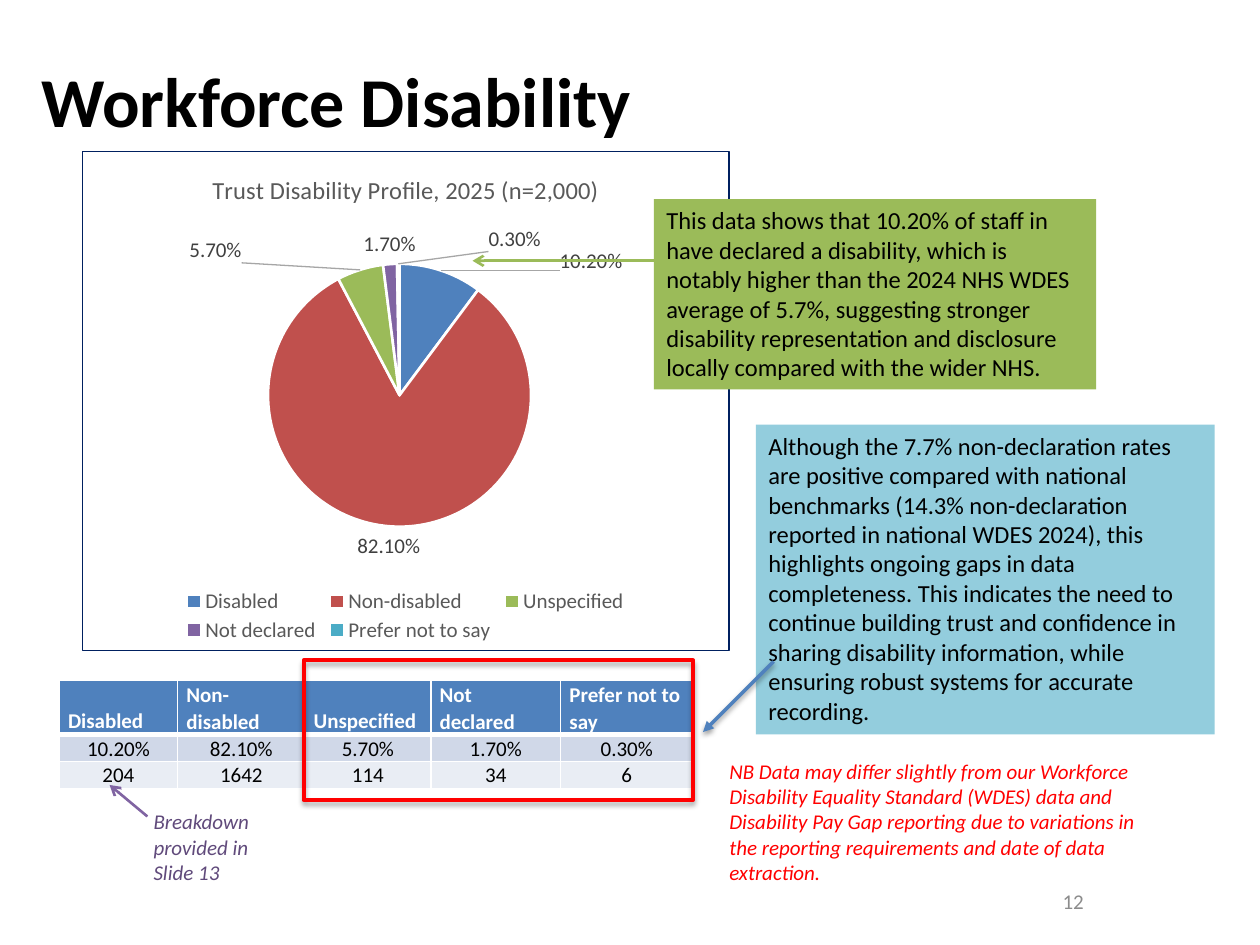
from pptx import Presentation
from pptx.chart.data import CategoryChartData
from pptx.dml.color import RGBColor
from pptx.enum.chart import XL_CHART_TYPE as ChartType, XL_LABEL_POSITION as LabelPosition
from pptx.enum.chart import XL_LEGEND_POSITION as LegendPosition
from pptx.enum.shapes import MSO_CONNECTOR as Connector, MSO_SHAPE as Preset
from pptx.enum.text import MSO_ANCHOR as Anchor, MSO_AUTO_SIZE as AutoSize, PP_ALIGN as Align
from pptx.oxml import parse_xml
from pptx.oxml.ns import nsdecls, qn
from pptx.util import Inches, Pt

FONT = "Calibri"
CATEGORIES = ["Disabled", "Non-disabled", "Unspecified", "Not declared", "Prefer not to say"]
SHARES = [0.102, 0.821, 0.057, 0.017, 0.003]
COUNTS = [204, 1642, 114, 34, 6]
SLICE_COLOURS = ["4F81BD", "C0504D", "9BBB59", "8064A2", "4BACC6"]
# Labels moved away from the pie, as fractions of the chart
LABEL_OFFSETS = {0: (0.18, 0.02), 2: (-0.18, 0), 4: (0.18, -0.01)}


def colour(hex_string):
    return RGBColor.from_string(hex_string)


def inches(box):
    return [Inches(value) for value in box]


def style_font(font, size, hex_string, bold=False, italic=False):
    font.name = FONT
    font.size = Pt(size)
    font.bold = bold
    font.italic = italic
    font.color.rgb = colour(hex_string)


def write(paragraph, text, size, hex_string, align=Align.LEFT, **style):
    paragraph.alignment = align
    run = paragraph.add_run()
    run.text = text
    style_font(run.font, size, hex_string, **style)


def set_effects(shape, opacity=None, blur=0, distance=0):
    """Give a shape a downward shadow, or none when no opacity is given."""
    shadow = ""
    if opacity:
        shadow = (f'<a:outerShdw blurRad="{Pt(blur)}" dist="{Pt(distance)}" dir="5400000" '
                  f'rotWithShape="0"><a:srgbClr val="000000"><a:alpha val="{opacity * 1000}"/>'
                  '</a:srgbClr></a:outerShdw>')
    properties = shape._element.spPr
    for old in properties.findall(qn("a:effectLst")):
        properties.remove(old)
    properties.append(parse_xml(f'<a:effectLst {nsdecls("a")}>{shadow}</a:effectLst>'))


def add_title(slide, box, text):
    title = slide.shapes.title
    title.left, title.top, title.width, title.height = inches(box)
    title.text_frame.vertical_anchor = Anchor.MIDDLE
    write(title.text_frame.paragraphs[0], text, 40, "000000", bold=True)


def add_note(slide, box, text, hex_string, align=Align.LEFT, anchor=Anchor.TOP, italic=True):
    frame = slide.shapes.add_textbox(*inches(box)).text_frame
    frame.word_wrap = True
    frame.vertical_anchor = anchor
    write(frame.paragraphs[0], text, 12, hex_string, align, italic=italic)


def add_callout(slide, box, text, fill):
    shape = slide.shapes.add_shape(Preset.RECTANGLE, *inches(box))
    shape.shadow.inherit = False
    shape.fill.solid()
    shape.fill.fore_color.rgb = colour(fill)
    shape.line.fill.background()
    frame = shape.text_frame
    frame.word_wrap = True
    frame.auto_size = AutoSize.SHAPE_TO_FIT_TEXT
    frame.vertical_anchor = Anchor.TOP
    write(frame.paragraphs[0], text, 14, "000000")


def add_highlight(slide, box):
    shape = slide.shapes.add_shape(Preset.RECTANGLE, *inches(box))
    shape.fill.background()
    shape.line.color.rgb = colour("FF0000")
    shape.line.width = Pt(2.25)
    set_effects(shape, 35, 3.1, 1.8)


def add_arrow(slide, start, end, hex_string, width, head="arrow", shadow=()):
    arrow = slide.shapes.add_connector(Connector.STRAIGHT, *inches(start + end))
    arrow.line.color.rgb = colour(hex_string)
    arrow.line.width = Pt(width)
    arrow.line._get_or_add_ln().append(parse_xml(f'<a:tailEnd {nsdecls("a")} type="{head}"/>'))
    set_effects(arrow, *shadow)


def chart_layout(x, y, width=None, height=None, inner=False):
    target = '<c:layoutTarget val="inner"/>' if inner else ""
    modes, size = "", ""
    if width:
        modes = '<c:xMode val="edge"/><c:yMode val="edge"/>'
        size = f'<c:w val="{width}"/><c:h val="{height}"/>'
    return parse_xml(f'<c:layout {nsdecls("c")}><c:manualLayout>{target}{modes}'
                     f'<c:x val="{x}"/><c:y val="{y}"/>{size}</c:manualLayout></c:layout>')


def outline(hex_string, width):
    return parse_xml(f'<c:spPr {nsdecls("c", "a")}><a:ln w="{Pt(width)}"><a:solidFill>'
                     f'<a:srgbClr val="{hex_string}"/></a:solidFill></a:ln></c:spPr>')


def style_labels(labels):
    style_font(labels.font, 12, "404040")
    labels.position = LabelPosition.OUTSIDE_END


def add_pie(slide, box):
    data = CategoryChartData(number_format="0.00%")
    data.categories = CATEGORIES
    data.add_series("Series 1", SHARES)
    chart = slide.shapes.add_chart(ChartType.PIE, *inches(box), data).chart
    style_font(chart.font, 12, "000000")
    chart_element = chart._chartSpace.find(qn("c:chart"))
    chart_element.addnext(outline("002060", 0.75))

    # Title and legend
    chart.has_title = True
    write(chart.chart_title.text_frame.paragraphs[0],
          "Trust Disability Profile, 2025 (n=2,000)", 14, "595959", Align.CENTER)
    chart.chart_title.include_in_layout = False
    chart.has_legend = True
    chart.legend.position = LegendPosition.BOTTOM
    chart.legend.include_in_layout = False
    style_font(chart.legend.font, 12, "595959")
    legend = chart.legend._element
    for old in legend.findall(qn("c:layout")):
        legend.remove(old)
    legend.find(qn("c:legendPos")).addnext(chart_layout(0.15, 0.87, 0.7, 0.12))

    # Plot area
    plot_area = chart_element.find(qn("c:plotArea"))
    for old in plot_area.findall(qn("c:layout")):
        plot_area.remove(old)
    plot_area.insert(0, chart_layout(0.287, 0.224, 0.407, 0.528, inner=True))

    # Slices
    plot = chart.plots[0]
    plot.vary_by_categories = True
    series = plot.series[0]
    for index, hex_string in enumerate(SLICE_COLOURS):
        slice_format = series.points[index].format
        slice_format.fill.solid()
        slice_format.fill.fore_color.rgb = colour(hex_string)
        slice_format.line.color.rgb = colour("FFFFFF")
        slice_format.line.width = Pt(1.5)

    # Labels and their leader lines
    labels = series.data_labels
    style_labels(labels)
    labels.show_value = True
    labels.number_format = "0.00%"
    labels.number_format_is_linked = False
    for index, offset in LABEL_OFFSETS.items():
        label = series.points[index].data_label
        style_labels(label)
        label._get_or_add_dLbl().find(qn("c:idx")).addnext(chart_layout(*offset))
    leaders = parse_xml(f'<c:leaderLines {nsdecls("c")}/>')
    leaders.append(outline("A6A6A6", 0.75))
    labels._element.append(leaders)


def fill_cell(cell, text, fill, header):
    cell.margin_left = cell.margin_right = Inches(0.07)
    cell.margin_top = cell.margin_bottom = 0
    cell.vertical_anchor = Anchor.BOTTOM
    properties = cell._tc.get_or_add_tcPr()
    for side in "LRTB":
        width = 3 if header and side == "B" else 1
        properties.append(parse_xml(
            f'<a:ln{side} {nsdecls("a")} w="{Pt(width)}"><a:solidFill>'
            f'<a:srgbClr val="FFFFFF"/></a:solidFill></a:ln{side}>'))
    cell.fill.solid()
    cell.fill.fore_color.rgb = colour(fill)
    paragraph = cell.text_frame.paragraphs[0]
    paragraph.line_spacing = 1.07
    paragraph.space_after = Pt(8)
    write(paragraph, text, 12, "FFFFFF" if header else "000000",
          Align.LEFT if header else Align.CENTER, bold=header)


def add_figures(slide, box):
    rows = [CATEGORIES, [f"{share:.2%}" for share in SHARES], [str(count) for count in COUNTS]]
    table = slide.shapes.add_table(len(rows), len(CATEGORIES), *inches(box)).table
    for column, width in zip(table.columns, [0.94, 1.01, 1, 1.03, 1.05]):
        column.width = Inches(width)
    for index, (texts, fill) in enumerate(zip(rows, ["4F81BD", "D0D8E8", "E9EDF4"])):
        table.rows[index].height = Inches(0.2)
        for column, text in enumerate(texts):
            fill_cell(table.cell(index, column), text, fill, header=index == 0)


def main():
    presentation = Presentation()
    presentation.slide_width, presentation.slide_height = Inches(10), Inches(7.5)
    slide = presentation.slides.add_slide(presentation.slide_layouts[5])

    add_title(slide, (0.23, 0.22, 5.52, 1.14), "Workforce Disability")
    add_note(slide, (6.37, 6.95, 2.33, 0.4), "12", "8C8C8C", Align.RIGHT, Anchor.MIDDLE, False)
    add_note(slide, (5.69, 5.97, 3.45, 1.11),
             "NB Data may differ slightly from our Workforce Disability Equality Standard (WDES) "
             "data and Disability Pay Gap reporting due to variations in the reporting "
             "requirements and date of data extraction.", "FF0000")
    add_pie(slide, (0.65, 1.2, 5.14, 3.97))

    # Findings
    add_callout(slide, (5.19, 1.58, 3.51, 1.51),
                "This data shows that 10.20% of staff in have declared a disability, which is "
                "notably higher than the 2024 NHS WDES average of 5.7%, suggesting stronger "
                "disability representation and disclosure locally compared with the wider NHS.",
                "9BBB59")
    add_callout(slide, (6, 3.37, 3.64, 2.46),
                "Although the 7.7% non-declaration rates are positive compared with national "
                "benchmarks (14.3% non-declaration reported in national WDES 2024), this "
                "highlights ongoing gaps in data completeness. This indicates the need to "
                "continue building trust and confidence in sharing disability information, "
                "while ensuring robust systems for accurate recording.", "93CDDD")
    add_arrow(slide, (5.19, 2.07), (3.75, 2.07), "9BBB59", 1.5)
    add_arrow(slide, (6.14, 5.25), (5.58, 5.81), "4F81BD", 2, "triangle", (38, 3.1, 1.6))

    # Figures with their highlight and pointer
    add_figures(slide, (0.47, 5.4, 5.04, 0.83))
    add_highlight(slide, (2.41, 5.24, 3.09, 1.11))
    add_note(slide, (1.12, 6.37, 1.21, 0.71), "Breakdown provided in Slide 13", "604A7B")
    add_arrow(slide, (1.17, 6.48), (0.87, 6.23), "8064A2", 1.5)

    presentation.save("out.pptx")


if __name__ == "__main__":
    main()
